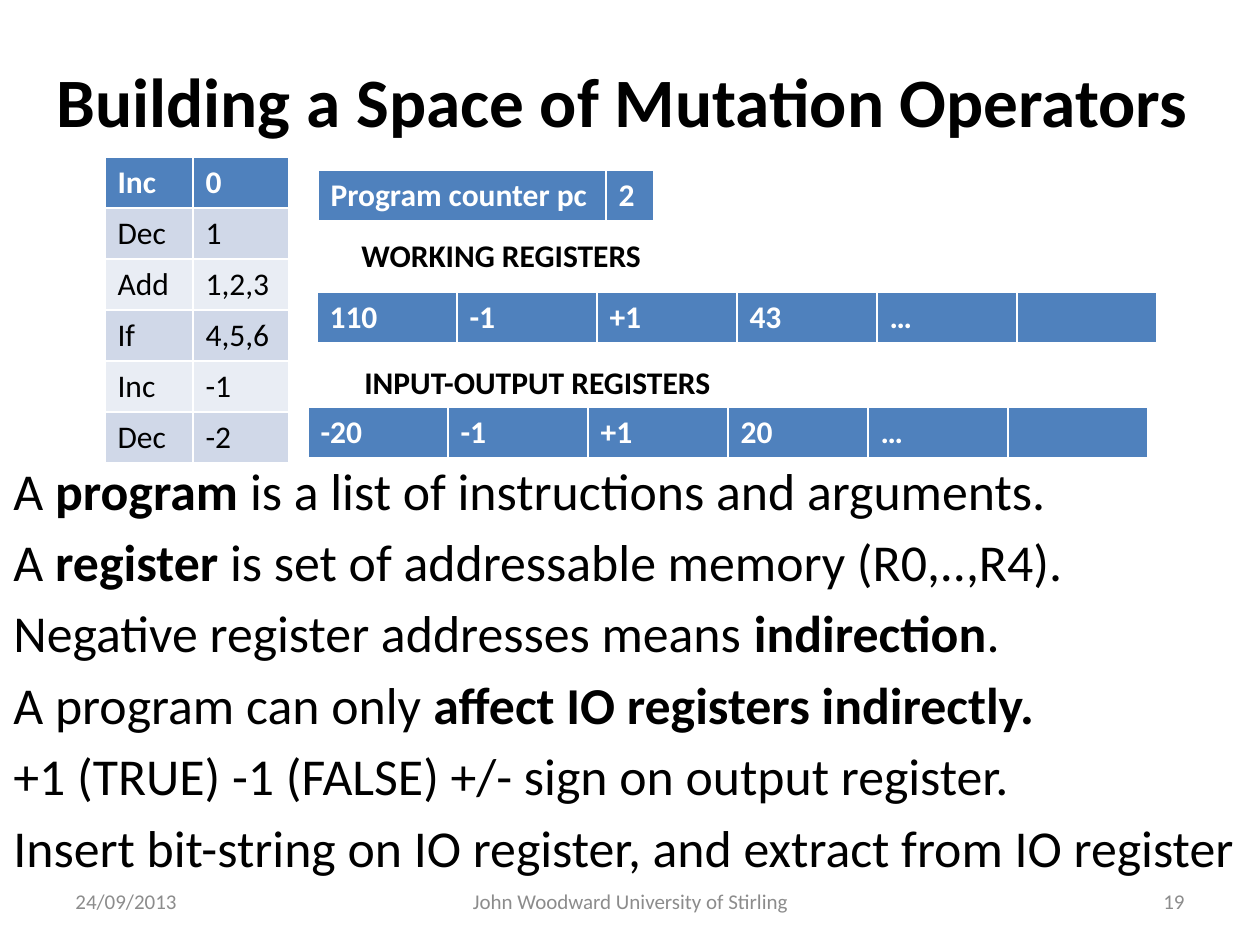
import pptx
import pptx.dml.color
import pptx.enum.text
import pptx.util

PX = 914400 // 126
COLORS = {"black": "000000", "white": "FFFFFF", "header": "4F81BD",
          "band_dark": "D0D8E8", "band_light": "E9EDF4", "footer": "8C8C8C"}
ROW_H = 51
ALIGN = pptx.enum.text.PP_ALIGN
ANCHOR = pptx.enum.text.MSO_ANCHOR

prs = pptx.Presentation()
prs.slide_width = pptx.util.Inches(10)
prs.slide_height = pptx.util.Inches(7.5)
s = prs.slides.add_slide(prs.slide_layouts[6])


def add_run(p, text, size, color, bold=False):
    r = p.add_run()
    r.text = text
    r.font.name = "Calibri"
    r.font.size = pptx.util.Pt(size)
    r.font.bold = bold
    r.font.color.rgb = pptx.dml.color.RGBColor.from_string(COLORS[color])


def add_text_frame(x, y, w, h, anchor=ANCHOR.TOP, wrap=True):
    tf = s.shapes.add_textbox(x * PX, y * PX, w * PX, h * PX).text_frame
    tf.word_wrap = wrap
    tf.vertical_anchor = anchor
    return tf


# Title
p = add_text_frame(0, 21, 1245, 158, ANCHOR.MIDDLE).paragraphs[0]
p.alignment = ALIGN.CENTER
add_run(p, "Building a Space of Mutation Operators", 39.6, "black", True)

# Explanations: every second run is bold
explanations = [
    ["A ", "program", " is a list of instructions and arguments."],
    ["A ", "register", " is set of addressable memory (R0,..,R4)."],
    ["Negative register addresses means ", "indirection", "."],
    ["A program can only ", "affect IO registers indirectly."],
    ["+1 (TRUE) -1 (FALSE) +/- sign on output register."],
    ["Insert bit-string on IO register, and extract from IO register"],
]
tf = add_text_frame(1, 452, 1280, 423)
for i, parts in enumerate(explanations):
    p = tf.add_paragraph() if i else tf.paragraphs[0]
    p.space_before = pptx.util.Pt(5.3)
    for j, part in enumerate(parts):
        add_run(p, part, 29.6, "black", j % 2 == 1)

# Program, registers and program counter: x, y, column widths, rows
program = [["Inc", "0"], ["Dec", "1"], ["Add", "1,2,3"],
           ["If", "4,5,6"], ["Inc", "-1"], ["Dec", "-2"]]
tables = [
    (105, 157, [88, 96], program),
    (308, 407, [140] * 6, [["-20", "-1", "+1", "20", "…", ""]]),
    (317, 292, [140] * 6, [["110", "-1", "+1", "43", "…", ""]]),
    (318, 170, [288, 48], [["Program counter pc", "2"]]),
]
for x, y, widths, rows in tables:
    table = s.shapes.add_table(len(rows), len(widths), x * PX, y * PX,
                               sum(widths) * PX, len(rows) * ROW_H * PX).table
    for col, width in zip(table.columns, widths):
        col.width = width * PX
    for i, row in enumerate(rows):
        table.rows[i].height = ROW_H * PX
        fill = "header" if i == 0 else "band_dark" if i % 2 else "band_light"
        for j, text in enumerate(row):
            cell = table.cell(i, j)
            cell.fill.solid()
            cell.fill.fore_color.rgb = pptx.dml.color.RGBColor.from_string(COLORS[fill])
            if text:
                add_run(cell.text_frame.paragraphs[0], text, 18,
                        "black" if i else "white", i == 0)

# Register labels
for x, y, w, text in [(352, 357, 377, "INPUT-OUTPUT REGISTERS"),
                      (349, 230, 307, "WORKING REGISTERS")]:
    tf = add_text_frame(x, y, w, 50, wrap=False)
    tf.auto_size = pptx.enum.text.MSO_AUTO_SIZE.SHAPE_TO_FIT_TEXT
    add_run(tf.paragraphs[0], text, 18, "black", True)

# Footer
for x, w, align, text in [
    (431, 399, ALIGN.CENTER, "John Woodward University of Stirling"),
    (903, 294, ALIGN.RIGHT, "19"),
    (63, 294, ALIGN.LEFT, "24/09/2013"),
]:
    p = add_text_frame(x, 876, w, 50, ANCHOR.MIDDLE).paragraphs[0]
    p.alignment = align
    add_run(p, text, 12, "footer")

prs.save("out.pptx")
